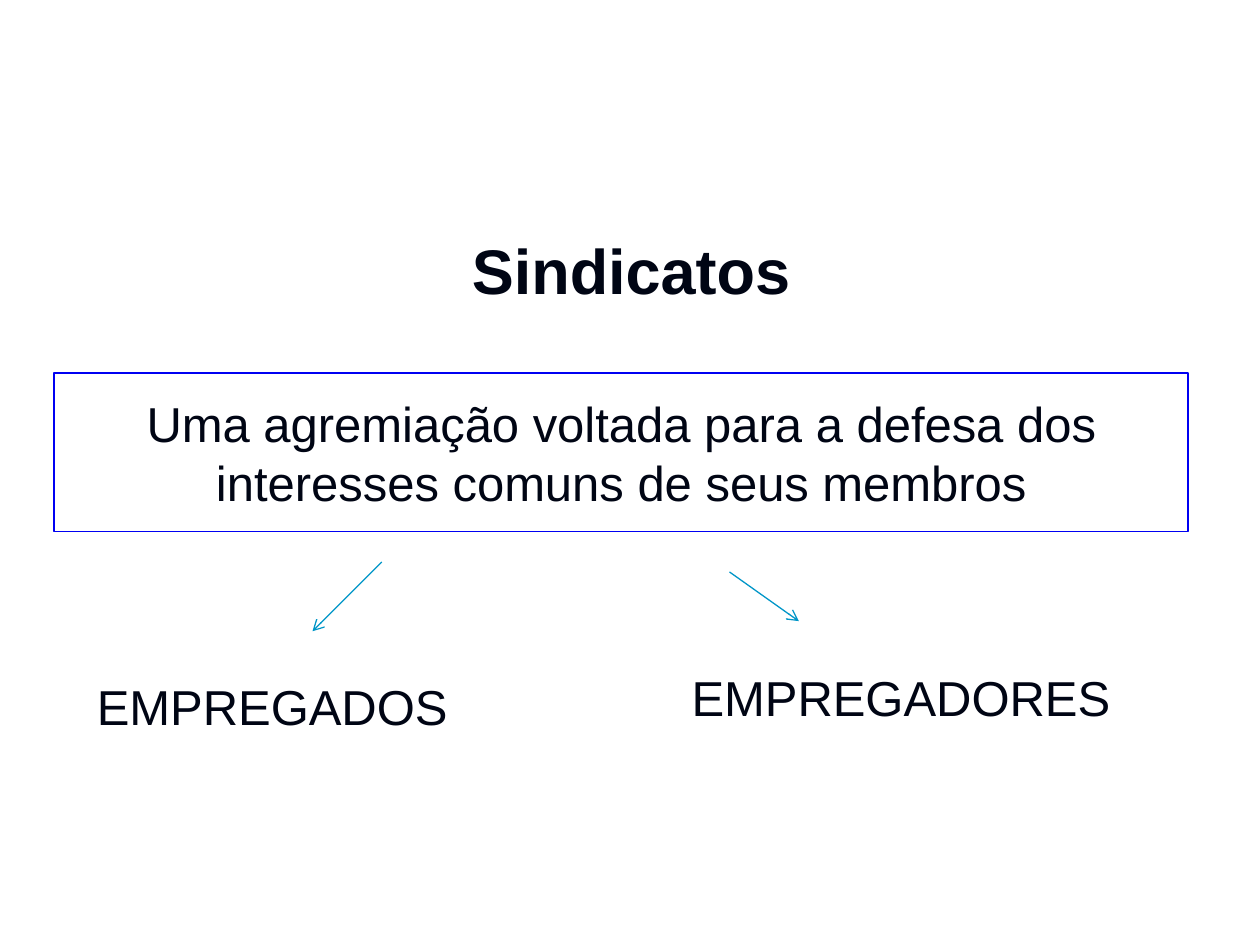
import pptx
import pptx.util
import pptx.dml.color
import pptx.enum.shapes
import pptx.enum.text
import pptx.oxml.ns
import lxml.etree

INK, FRAME, ARROW = "000514", "0000F2", "0096C8"
ALIGN = pptx.enum.text.PP_ALIGN
ANCHOR = pptx.enum.text.MSO_ANCHOR

deck = pptx.Presentation()
deck.slide_width = pptx.util.Inches(10)
deck.slide_height = pptx.util.Inches(7.5)
W, H = deck.slide_width / 100, deck.slide_height / 100  # one percent of the slide
slide = deck.slides.add_slide(deck.slide_layouts[5])


def color(hex_value):
    return pptx.dml.color.RGBColor.from_string(hex_value)


def write(holder, text, align, anchor, **font_format):
    frame = holder.text_frame
    frame.word_wrap = True
    frame.vertical_anchor = anchor
    frame.text = text
    paragraph = frame.paragraphs[0]
    paragraph.alignment = align
    font = paragraph.runs[0].font
    values = {"name": "Arial", "size": pptx.util.Pt(28), "bold": False, **font_format}
    for key, value in values.items():
        setattr(font, key, value)
    font.color.rgb = color(INK)


# Title
heading = slide.shapes.title
place = {"left": 5.1 * W, "top": 22.67 * H, "width": 90 * W, "height": 11.6 * H}
for key, value in place.items():
    setattr(heading, key, int(value))
write(heading, "Sindicatos", ALIGN.CENTER, ANCHOR.MIDDLE,
      size=pptx.util.Pt(36), bold=True)

# Framed definition
definition = slide.shapes.add_shape(
    pptx.enum.shapes.MSO_SHAPE.RECTANGLE,
    int(4.3 * W), int(39.47 * H), int(90 * W), int(16.8 * H))
definition.shadow.inherit = False
definition.fill.background()
definition.line.color.rgb = color(FRAME)
definition.line.width = pptx.util.Pt(0.75)
write(definition,
      "Uma agremiação voltada para a defesa dos interesses comuns de seus membros",
      ALIGN.CENTER, ANCHOR.MIDDLE)

# The two kinds of members: label, left, top
members = [("EMPREGADOS", 6.7, 70.93), ("EMPREGADORES", 53.9, 70)]
for label, left, top in members:
    member = slide.shapes.add_textbox(
        int(left * W), int(top * H), int(39.4 * W), int(7.6 * H))
    write(member, label, ALIGN.LEFT, ANCHOR.TOP)
    member.text_frame.auto_size = pptx.enum.text.MSO_AUTO_SIZE.SHAPE_TO_FIT_TEXT

# Arrows from the definition to the members
branches = [(30.3, 59.47, 24.8, 66.8), (57.9, 60.53, 63.4, 65.73)]
for x1, y1, x2, y2 in branches:
    branch = slide.shapes.add_connector(
        pptx.enum.shapes.MSO_CONNECTOR.STRAIGHT,
        int(x1 * W), int(y1 * H), int(x2 * W), int(y2 * H))
    branch.line.color.rgb = color(ARROW)
    branch.line.width = pptx.util.Pt(0.75)
    outline = branch.line._get_or_add_ln()
    lxml.etree.SubElement(outline, pptx.oxml.ns.qn("a:tailEnd"), type="arrow")
    lxml.etree.SubElement(outline.getparent(), pptx.oxml.ns.qn("a:effectLst"))

deck.save("out.pptx")
